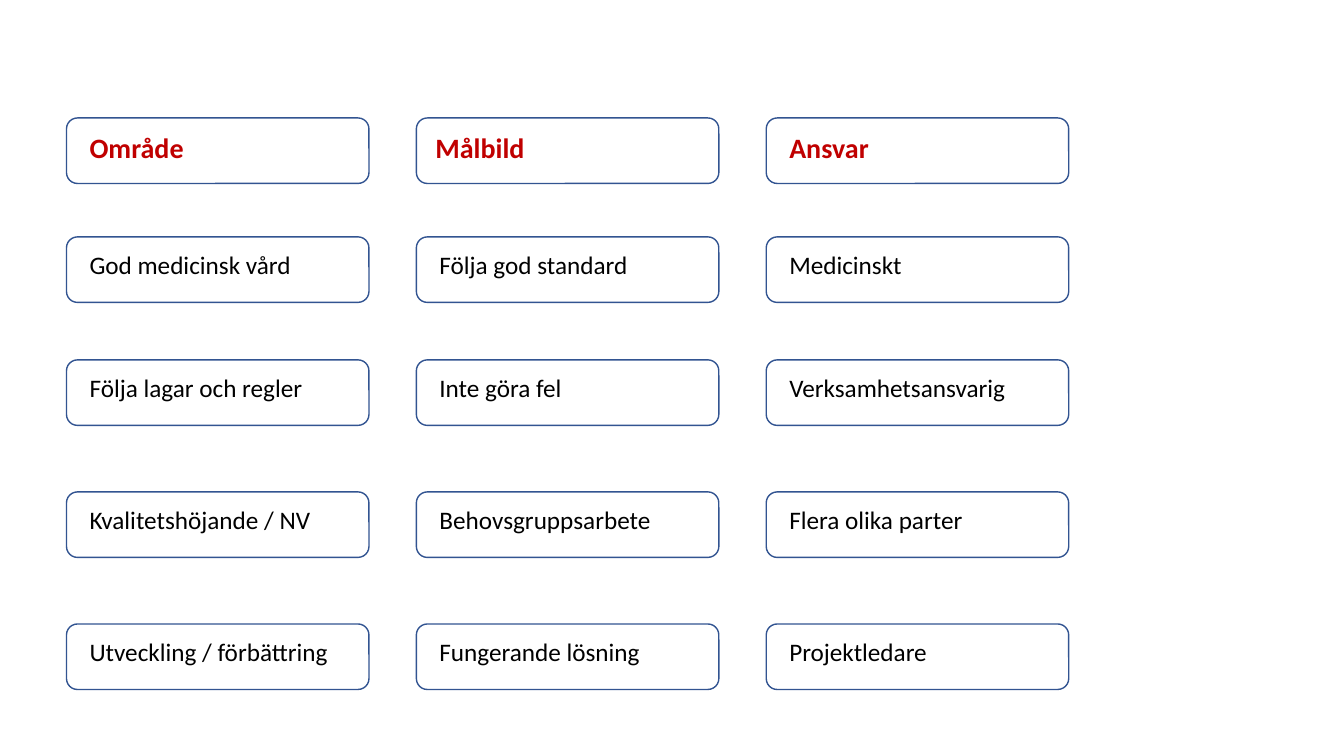
from dataclasses import dataclass

from pptx import Presentation
from pptx.dml.color import RGBColor
from pptx.enum.shapes import MSO_SHAPE
from pptx.enum.text import MSO_ANCHOR, MSO_AUTO_SIZE, PP_ALIGN
from pptx.util import Inches, Pt


@dataclass(frozen=True)
class Theme:
    font: str = "Calibri"
    heading_size: int = 20
    body_size: int = 18
    heading: RGBColor = RGBColor(0xC0, 0x00, 0x00)
    body: RGBColor = RGBColor(0x00, 0x00, 0x00)
    card: RGBColor = RGBColor(0xFF, 0xFF, 0xFF)
    outline: RGBColor = RGBColor(0x32, 0x54, 0x91)
    outline_width: int = 1


THEME = Theme()

# Each column: heading, inset of the heading, then its entries
COLUMNS = [
    ("Område", 0.13, ["God medicinsk vård", "Följa lagar och regler",
                      "Kvalitetshöjande / NV", "Utveckling / förbättring"]),
    ("Målbild", 0.09, ["Följa god standard", "Inte göra fel",
                       "Behovsgruppsarbete", "Fungerande lösning"]),
    ("Ansvar", 0.13, ["Medicinskt", "Verksamhetsansvarig",
                      "Flera olika parter", "Projektledare"]),
]
CARD_WIDTH, CARD_HEIGHT = 3, 0.65
COLUMN_STEP = 3.47
ENTRY_INSET = 0.13
HEADING_OFFSET = 0
ENTRY_OFFSETS = [1.18, 2.4, 3.71, 5.02]


def add_card(slide, left, top, wording, inset, is_heading=False):
    """One rounded card with its label, grouped."""
    card = slide.shapes.add_group_shape()

    # Outline
    frame = card.shapes.add_shape(
        MSO_SHAPE.ROUNDED_RECTANGLE, Inches(left), Inches(top),
        Inches(CARD_WIDTH), Inches(CARD_HEIGHT))
    frame.shadow.inherit = False
    frame.fill.solid()
    frame.fill.fore_color.rgb = THEME.card
    frame.line.color.rgb = THEME.outline
    frame.line.width = Pt(THEME.outline_width)

    # Label
    label = card.shapes.add_textbox(
        Inches(left + inset), Inches(top + (0.08 if is_heading else 0.07)),
        Inches(CARD_WIDTH - 2 * ENTRY_INSET),
        Inches(0.44 if is_heading else 0.4)).text_frame
    label.word_wrap = True
    label.auto_size = MSO_AUTO_SIZE.SHAPE_TO_FIT_TEXT
    label.vertical_anchor = MSO_ANCHOR.TOP
    line = label.paragraphs[0]
    line.alignment = PP_ALIGN.LEFT
    run = line.add_run()
    run.text = wording
    run.font.name = THEME.font
    run.font.bold = is_heading
    run.font.size = Pt(THEME.heading_size if is_heading else THEME.body_size)
    run.font.color.rgb = THEME.heading if is_heading else THEME.body


def add_column(slide, left, top, heading, heading_inset, entries):
    """A heading card with its entry cards below."""
    add_card(slide, left, top + HEADING_OFFSET, heading, heading_inset, True)
    for offset, entry in zip(ENTRY_OFFSETS, entries):
        add_card(slide, left, top + offset, entry, ENTRY_INSET)


def add_goal_grid(slide, left, top):
    """Areas, goals and responsibilities side by side."""
    for index, (heading, heading_inset, entries) in enumerate(COLUMNS):
        add_column(slide, left + index * COLUMN_STEP, top,
                   heading, heading_inset, entries)


def main():
    deck = Presentation()
    deck.slide_width, deck.slide_height = Inches(13.33), Inches(7.5)
    slide = deck.slides.add_slide(deck.slide_layouts[6])
    add_goal_grid(slide, 0.66, 1.17)
    deck.save("out.pptx")


if __name__ == "__main__":
    main()
